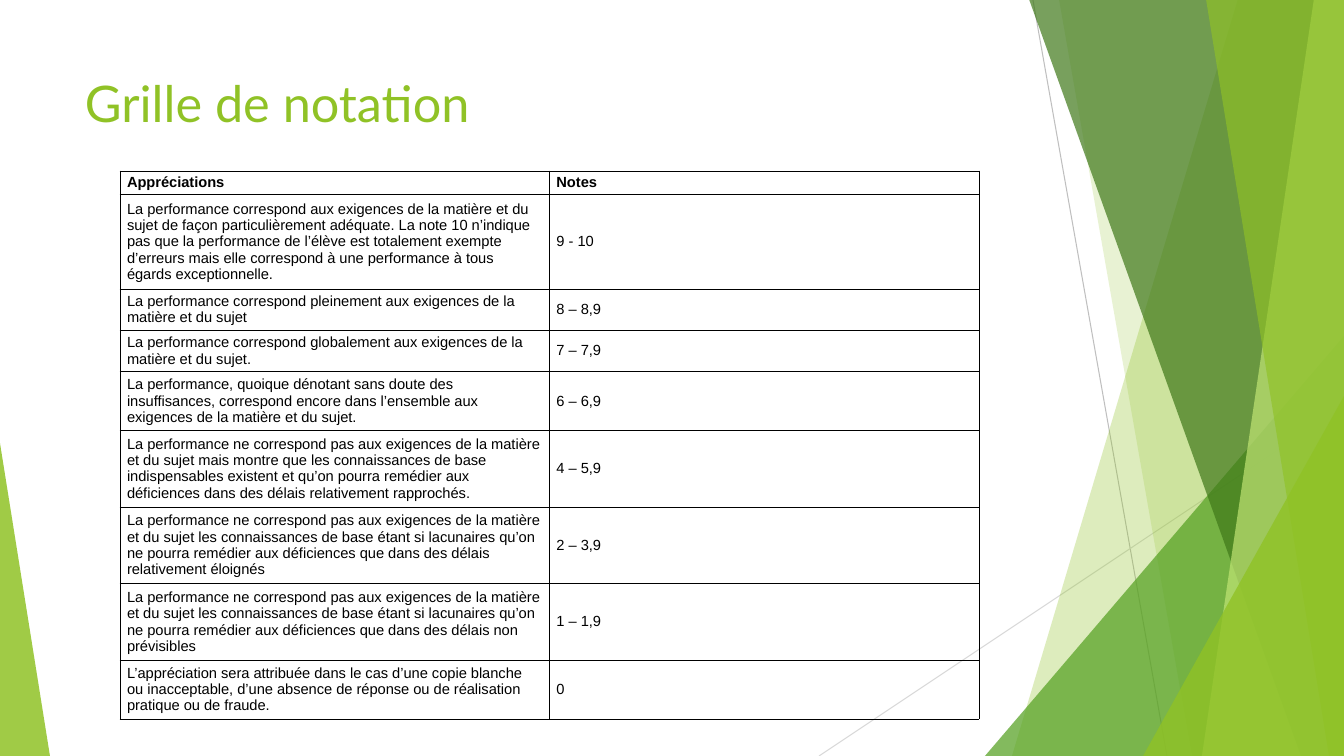
"""Build the grading scale slide with its green facet decoration."""
from pptx import Presentation
from pptx import util as u
from pptx.dml.color import RGBColor
from pptx.enum import shapes, text
from pptx.oxml import parse_xml
from pptx.oxml.ns import nsdecls, qn
from lxml import etree

W, H = 1344, 756
SCALE = 12192000 / W
TITLE = "Grille de notation"
FAIL = "La performance ne correspond pas aux exigences de la matière et du sujet "
GAPS = (FAIL + "les connaissances de base étant si lacunaires qu’on ne pourra "
        "remédier aux déficiences que dans des délais ")
ROWS = [
    ("Appréciations", "Notes", 1),
    ("La performance correspond aux exigences de la matière et du sujet de façon "
     "particulièrement adéquate. La note 10 n’indique pas que la performance de l’élève "
     "est totalement exempte d’erreurs mais elle correspond à une performance à tous "
     "égards exceptionnelle.", "9 - 10", 5),
    ("La performance correspond pleinement aux exigences de la matière et du sujet",
     "8 – 8,9", 2),
    ("La performance correspond globalement aux exigences de la matière et du sujet.",
     "7 – 7,9", 2),
    ("La performance, quoique dénotant sans doute des insuffisances, correspond encore "
     "dans l’ensemble aux exigences de la matière et du sujet.", "6 – 6,9", 3),
    (FAIL + "mais montre que les connaissances de base indispensables existent et qu’on "
     "pourra remédier aux déficiences dans des délais relativement rapprochés.",
     "4 – 5,9", 4),
    (GAPS + "relativement éloignés", "2 – 3,9", 4),
    (GAPS + "non prévisibles", "1 – 1,9", 4),
    ("L’appréciation sera attribuée dans le cas d’une copie blanche ou inacceptable, "
     "d’une absence de réponse ou de réalisation pratique ou de fraude.", "0", 3),
]
COLORS = {"lime": "90C226", "green": "54A021", "forest": "3F7819", "pale": "C0E474",
          "black": "000000", "silver": "BFBFBF", "mist": "D9D9D9"}
LINES = [((1033, 0), (1167, H), "silver"), ((W, 406), (819, H), "mist")]
FACETS = [
    ("band", (1238, 1012), "lime", 30),
    ("band", (1059, 1192), "lime", 20),
    ("triangle", (985, 336, 359, 420, 1), "green", 72),
    ("band", (1029, 1301), "forest", 70),
    ("band", (1314, 1202), "pale", 70),
    ("band", (1206, 1329), "lime", 65),
    ("triangle", (1143, 396, 201, 360, 1), "lime", 80),
    ("triangle", (0, 443, 50, 313, 0), "lime", 85),
]
TABLE_LEFT, TABLE_TOP, TABLE_W = 120, 171, 859
LINE_H, CELL_PAD = 16.35, 7
CELL_FORMAT = {"margin_left": u.Inches(0.07), "margin_right": u.Inches(0.07),
               "margin_top": u.Inches(0.03), "margin_bottom": u.Inches(0.03),
               "vertical_anchor": text.MSO_ANCHOR.MIDDLE}


def px(*values):
    return [u.Emu(round(v * SCALE)) for v in values]


def rgb(name):
    return RGBColor.from_string(COLORS[name])


def set_all(obj, values):
    for name, value in values.items():
        setattr(obj, name, value)


def write(tf, words, color, **font):
    r = tf.paragraphs[0].add_run()
    r.text = words
    set_all(r.font, font)
    r.font.color.rgb = rgb(color)


def add_line(s, start, end, color):
    line = s.shapes.add_connector(shapes.MSO_CONNECTOR.STRAIGHT, *px(*start, *end))
    line.line.color.rgb = rgb(color)
    line.line.width = u.Pt(0.75)
    etree.SubElement(line._element.spPr, qn("a:effectLst"))


def add_facet(s, kind, geometry, color, alpha):
    if kind == "band":
        top_x, bottom_x = geometry
        builder = s.shapes.build_freeform(top_x, -1, scale=SCALE)
        builder.add_line_segments([(W, -1), (W, H), (bottom_x, H)], close=True)
        sp = builder.convert_to_shape()
    else:
        *box, apex = geometry
        sp = s.shapes.add_shape(shapes.MSO_SHAPE.ISOSCELES_TRIANGLE, *px(*box))
        sp.adjustments[0] = apex
    sp.shadow.inherit = False
    sp.line.fill.background()
    sp.fill.solid()
    sp.fill.fore_color.rgb = rgb(color)
    fill = sp._element.spPr.find(qn("a:solidFill"))
    etree.SubElement(fill[0], qn("a:alpha"), val=str(alpha * 1000))


def add_borders(cell):
    tc_pr = cell._tc.get_or_add_tcPr()
    for i, side in enumerate(("lnL", "lnR", "lnT", "lnB")):
        tc_pr.insert(i, parse_xml(
            f'<a:{side} {nsdecls("a")} w="{u.Pt(0.48)}"><a:solidFill>'
            f'<a:srgbClr val="{COLORS["black"]}"/></a:solidFill></a:{side}>'))


def add_grades(s):
    heights = [CELL_PAD + LINE_H * n for *_, n in ROWS]
    table = s.shapes.add_table(len(ROWS), 2, *px(TABLE_LEFT, TABLE_TOP, TABLE_W,
                                                 sum(heights))).table
    set_all(table, {"first_row": False, "horz_banding": False})
    for i, (row, height) in enumerate(zip(ROWS, heights)):
        table.rows[i].height = px(height)[0]
        for j, words in enumerate(row[:2]):
            cell = table.cell(i, j)
            set_all(cell, CELL_FORMAT)
            cell.fill.background()
            add_borders(cell)
            write(cell.text_frame, words, "black", name="Arial", size=u.Pt(10.5),
                  bold=i == 0)


def main():
    prs = Presentation()
    prs.slide_width, prs.slide_height = px(W, H)
    s = prs.slides.add_slide(prs.slide_layouts[6])
    for line in LINES:
        add_line(s, *line)
    for facet in FACETS:
        add_facet(s, *facet)
    tf = s.shapes.add_textbox(*px(75, 67, 948, 145)).text_frame
    set_all(tf, {"word_wrap": True, "vertical_anchor": text.MSO_ANCHOR.TOP})
    write(tf, TITLE, "lime", name="Lato", size=u.Pt(36))
    add_grades(s)
    prs.save("out.pptx")


if __name__ == "__main__":
    main()
